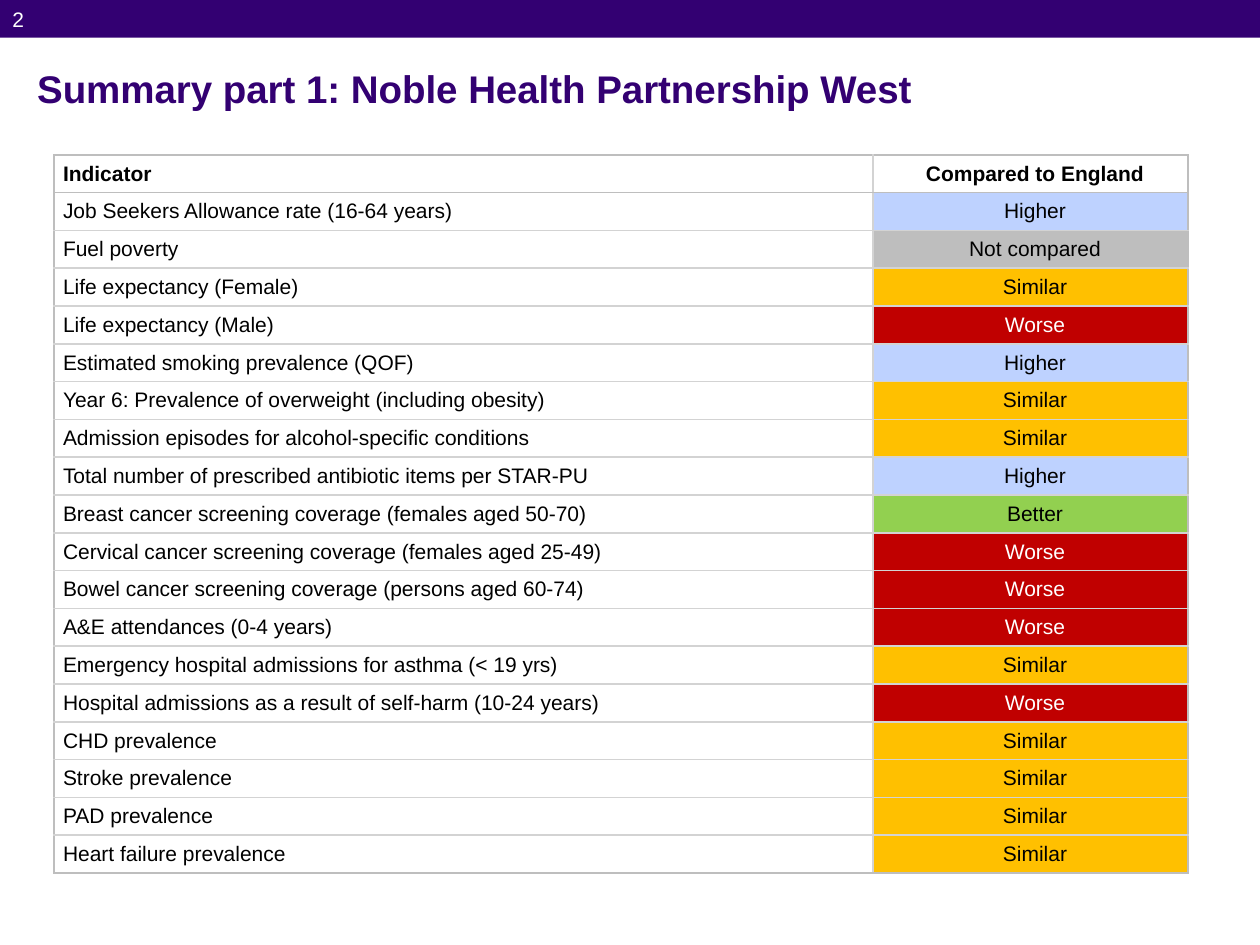
from lxml.etree import SubElement
from pptx import Presentation
from pptx.dml.color import RGBColor
from pptx.enum.shapes import MSO_SHAPE
from pptx.enum.text import MSO_ANCHOR, PP_ALIGN
from pptx.oxml.ns import qn
from pptx.util import Cm, Pt

COLOURS = {
    "purple": "330072",
    "white": "FFFFFF",
    "black": "000000",
    "outer": "BEBEBE",
    "inner": "D3D3D3",
}
RATING_FILLS = {
    "Higher": "BED2FF",
    "Not compared": "BEBEBE",
    "Similar": "FFC000",
    "Worse": "C00000",
    "Better": "92D050",
}
ROWS = [
    ("Indicator", "Compared to England"),
    ("Job Seekers Allowance rate (16-64 years)", "Higher"),
    ("Fuel poverty", "Not compared"),
    ("Life expectancy (Female)", "Similar"),
    ("Life expectancy (Male)", "Worse"),
    ("Estimated smoking prevalence (QOF)", "Higher"),
    ("Year 6: Prevalence of overweight (including obesity)", "Similar"),
    ("Admission episodes for alcohol-specific conditions", "Similar"),
    ("Total number of prescribed antibiotic items per STAR-PU", "Higher"),
    ("Breast cancer screening coverage (females aged 50-70)", "Better"),
    ("Cervical cancer screening coverage (females aged 25-49)", "Worse"),
    ("Bowel cancer screening coverage (persons aged 60-74)", "Worse"),
    ("A&E attendances (0-4 years)", "Worse"),
    ("Emergency hospital admissions for asthma (< 19 yrs)", "Similar"),
    ("Hospital admissions as a result of self-harm (10-24 years)", "Worse"),
    ("CHD prevalence", "Similar"),
    ("Stroke prevalence", "Similar"),
    ("PAD prevalence", "Similar"),
    ("Heart failure prevalence", "Similar"),
]


def write(frame, text, size, colour, bold=False):
    frame.text = text
    frame.word_wrap = True
    para = frame.paragraphs[0]
    font = para.runs[0].font
    font.name = "Arial"
    font.size = Pt(size)
    font.bold = bold
    font.color.rgb = RGBColor.from_string(COLOURS[colour])
    return para


def add_border(cell, side, colour):
    line = SubElement(cell._tc.get_or_add_tcPr(), qn(f"a:ln{side}"), w=str(Pt(1)))
    fill = SubElement(line, qn("a:solidFill"))
    SubElement(fill, qn("a:srgbClr"), val=COLOURS[colour])


deck = Presentation()
deck.slide_width = Cm(25.4)
deck.slide_height = Cm(19.05)
page = deck.slides.add_slide(deck.slide_layouts[6])

banner = page.shapes.add_shape(MSO_SHAPE.RECTANGLE, 0, 0, deck.slide_width, Cm(0.76))
banner.shadow.inherit = False
banner.fill.solid()
banner.fill.fore_color.rgb = RGBColor.from_string(COLOURS["purple"])
banner.line.fill.background()

title_box = page.shapes.add_textbox(Cm(0.5), Cm(1.2), Cm(24.4), Cm(1.15))
title_box.text_frame.vertical_anchor = MSO_ANCHOR.MIDDLE
write(title_box.text_frame, "Summary part 1: Noble Health Partnership West", 22, "purple", True)

number_box = page.shapes.add_textbox(0, 0, Cm(1.6), Cm(1.6))
write(number_box.text_frame, "2", 12, "white")

table = page.shapes.add_table(len(ROWS), 2, Cm(1.09), Cm(3.12), Cm(22.86), Cm(14.48)).table
table.first_row = False
table.horz_banding = False
table.columns[0].width = Cm(16.51)
table.columns[1].width = Cm(6.35)

last_row = len(ROWS) - 1
for row_index, row in enumerate(ROWS):
    for column_index, text in enumerate(row):
        cell = table.cell(row_index, column_index)
        cell.margin_left = Cm(0.18)
        cell.margin_right = cell.margin_top = cell.margin_bottom = 0
        cell.vertical_anchor = MSO_ANCHOR.MIDDLE
        colour = "white" if text == "Worse" else "black"
        para = write(cell.text_frame, text, 12, colour, row_index == 0)
        para.space_before = para.space_after = Pt(5)
        para.alignment = PP_ALIGN.CENTER if column_index else PP_ALIGN.LEFT
        outer_sides = {
            "L": column_index == 0,
            "R": column_index == 1,
            "T": row_index <= 1,
            "B": row_index in (0, last_row),
        }
        for side, is_outer in outer_sides.items():
            add_border(cell, side, "outer" if is_outer else "inner")
        if text in RATING_FILLS:
            cell.fill.solid()
            cell.fill.fore_color.rgb = RGBColor.from_string(RATING_FILLS[text])
        else:
            cell.fill.background()

deck.save("out.pptx")
